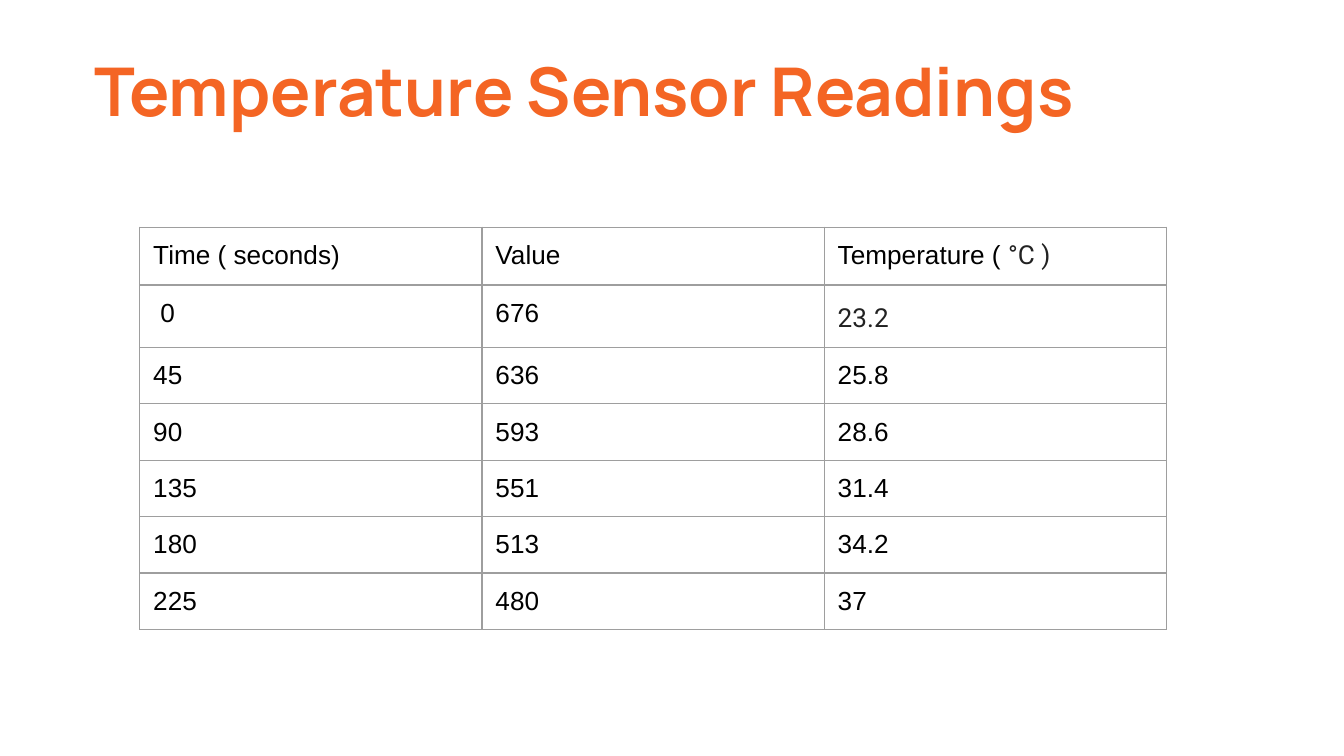
from lxml.etree import SubElement
from pptx import Presentation
from pptx.dml.color import RGBColor
from pptx.enum.text import MSO_ANCHOR, PP_ALIGN
from pptx.oxml.ns import qn
from pptx.util import Inches, Pt

ORANGE = RGBColor(0xF4, 0x65, 0x24)
BLACK = RGBColor(0, 0, 0)
DARK = RGBColor(0x22, 0x22, 0x22)
GREY = RGBColor(0x9E, 0x9E, 0x9E)

INSET = Inches(0.1)
PLAIN = ("Arial", BLACK)
ACCENT = ("Roboto", DARK)

HEADER = ["Time ( seconds)", "Value", [("Temperature ( ", PLAIN), ("°C )", ACCENT)]]
READINGS = [
    [" 0", "676", [("23.2", ACCENT)]],
    ["45", "636", "25.8"],
    ["90", "593", "28.6"],
    ["135", "551", "31.4"],
    ["180", "513", "34.2"],
    ["225", "480", "37"],
]


def add_run(p, text, size, font, color, bold=False):
    r = p.add_run()
    r.text = text
    r.font.size = Pt(size)
    r.font.name = font
    r.font.bold = bold
    r.font.color.rgb = color


def set_insets(box):
    box.margin_left = box.margin_right = INSET
    box.margin_top = box.margin_bottom = INSET


def set_borders(cell):
    tc_pr = cell._tc.get_or_add_tcPr()
    for side in ("lnL", "lnR", "lnT", "lnB"):
        ln = SubElement(tc_pr, qn(f"a:{side}"), w=str(Pt(0.75)))
        fill = SubElement(ln, qn("a:solidFill"))
        SubElement(fill, qn("a:srgbClr"), val=str(GREY))


def add_title(slide, left, top, width, height):
    sp = slide.shapes.title
    sp.left, sp.top = Inches(left), Inches(top)
    sp.width, sp.height = Inches(width), Inches(height)
    tf = sp.text_frame
    set_insets(tf)
    tf.word_wrap = True
    tf.vertical_anchor = MSO_ANCHOR.TOP
    p = tf.paragraphs[0]
    p.alignment = PP_ALIGN.LEFT
    p.space_before = Pt(0)
    p.space_after = Pt(16)
    p.line_spacing = 1.0
    add_run(p, "Temperature Sensor Readings", 36, "Manrope", ORANGE, bold=True)


def add_readings(slide, left, top, width, row_height):
    rows = [HEADER] + READINGS
    table = slide.shapes.add_table(
        len(rows), len(HEADER), Inches(left), Inches(top),
        Inches(width), Inches(row_height * len(rows))).table
    table.first_row = False
    table.horz_banding = False
    for i, row in enumerate(rows):
        for j, content in enumerate(row):
            cell = table.cell(i, j)
            set_insets(cell)
            set_borders(cell)
            cell.fill.background()
            p = cell.text_frame.paragraphs[0]
            runs = [(content, PLAIN)] if isinstance(content, str) else content
            for text, (font, color) in runs:
                add_run(p, text, 14, font, color)
    table.cell(1, 2).text_frame.paragraphs[0].line_spacing = 1.15


def main():
    prs = Presentation()
    prs.slide_width = Inches(10)
    prs.slide_height = prs.slide_width * 9 // 16
    slide = prs.slides.add_slide(prs.slide_layouts[5])
    add_title(slide, 0.6, 0.27, 7.9, 0.92)
    add_readings(slide, 1.04, 1.69, 7.64, 0.42)
    prs.save("out.pptx")


if __name__ == "__main__":
    main()
